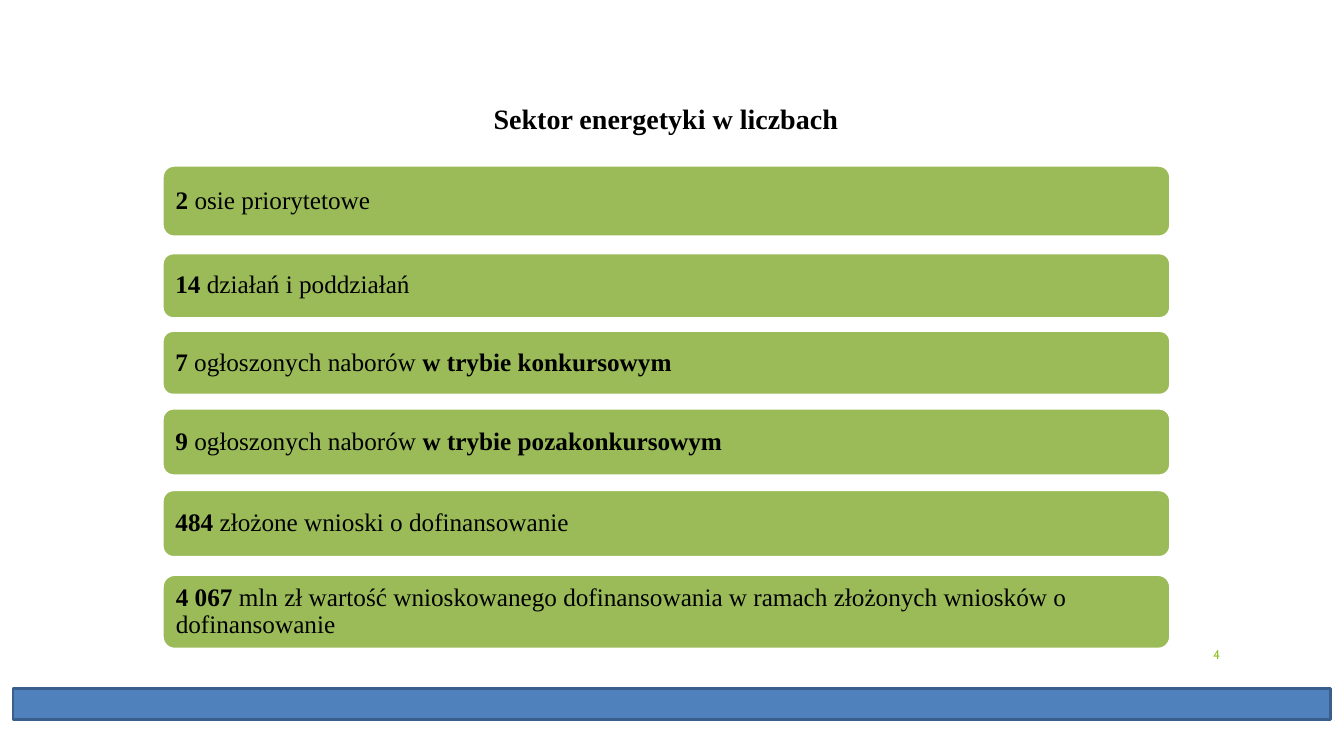
from pptx import Presentation
from pptx.dml.color import RGBColor
from pptx.enum.shapes import MSO_SHAPE
from pptx.enum.text import MSO_ANCHOR, PP_ALIGN
from pptx.util import Inches, Pt

# Content
TITLE = "Sektor energetyki w liczbach"
PAGE_NUMBER = "4"
# Each bar: top, height, then (text, bold) pieces
FACTS = [
    (1.64, 0.71, [("2 ", True), ("osie priorytetowe", False)]),
    (2.51, 0.65, [("14", True), (" działań i poddziałań", False)]),
    (3.28, 0.64, [("7", True), (" ogłoszonych naborów ", False),
                  ("w trybie konkursowym", True)]),
    (4.05, 0.67, [("9 ", True), ("ogłoszonych naborów ", False),
                  ("w trybie pozakonkursowym", True)]),
    (4.86, 0.67, [("484 ", True), ("złożone wnioski o dofinansowanie", False)]),
    (5.70, 0.74, [("4 067 ", True),
                  ("mln zł wartość wnioskowanego dofinansowania w ramach "
                   "złożonych wniosków o dofinansowanie", False)]),
]
COLORS = {"bar": "9BBB59", "bar_line": "FFFFFF", "footer": "4F81BD",
          "footer_line": "3A5F8C", "text": "000000", "number": "90C226"}
SERIF = "Times New Roman"

# Layout in inches
SLIDE_W, SLIDE_H = 13.33, 7.5
BAR_W = 10
BAR_LEFT = 1.61
BAR_INSET = 0.1


def rgb(key):
    return RGBColor.from_string(COLORS[key])


def style(run, size, bold=False, font=SERIF, color="text"):
    run.font.size, run.font.bold, run.font.name = Pt(size), bold, font
    run.font.color.rgb = rgb(color)


def add_block(kind, box, fill, line):
    block = slide.shapes.add_shape(kind, *map(Inches, box))
    block.shadow.inherit = False
    block.fill.solid()
    block.fill.fore_color.rgb = rgb(fill)
    block.line.color.rgb = rgb(line)
    block.line.width = Pt(2)
    return block


def add_label(text, box, align, anchor, size, **look):
    frame = slide.shapes.add_textbox(*map(Inches, box)).text_frame
    frame.word_wrap = True
    frame.vertical_anchor = anchor
    frame.text = text
    frame.paragraphs[0].alignment = align
    style(frame.paragraphs[0].runs[0], size, **look)


deck = Presentation()
deck.slide_width, deck.slide_height = Inches(SLIDE_W), Inches(SLIDE_H)
slide = deck.slides.add_slide(deck.slide_layouts[6])

# Page number and footer band
add_label(PAGE_NUMBER, (11.45, 6.29, 0.75, 0.4), PP_ALIGN.RIGHT,
          MSO_ANCHOR.MIDDLE, 9, font="Cabin", color="number")
add_block(MSO_SHAPE.FLOWCHART_PROCESS, (0.13, 6.83, 13.07, 0.31),
          "footer", "footer_line")

# Fact bars
for top, height, pieces in FACTS:
    bar = add_block(MSO_SHAPE.ROUNDED_RECTANGLE, (BAR_LEFT, top, BAR_W, height),
                    "bar", "bar_line")
    frame = bar.text_frame
    frame.word_wrap = True
    frame.vertical_anchor = MSO_ANCHOR.MIDDLE
    frame.margin_left = frame.margin_right = Inches(BAR_INSET)
    frame.margin_top = frame.margin_bottom = Inches(BAR_INSET)
    fact = frame.paragraphs[0]
    fact.alignment = PP_ALIGN.LEFT
    fact.line_spacing = 0.9
    for text, bold in pieces:
        run = fact.add_run()
        run.text = text
        style(run, 18, bold)

# Title
add_label(TITLE, (4.52, 0.96, 4.17, 0.44), PP_ALIGN.CENTER,
          MSO_ANCHOR.TOP, 20, bold=True)

deck.save("out.pptx")
